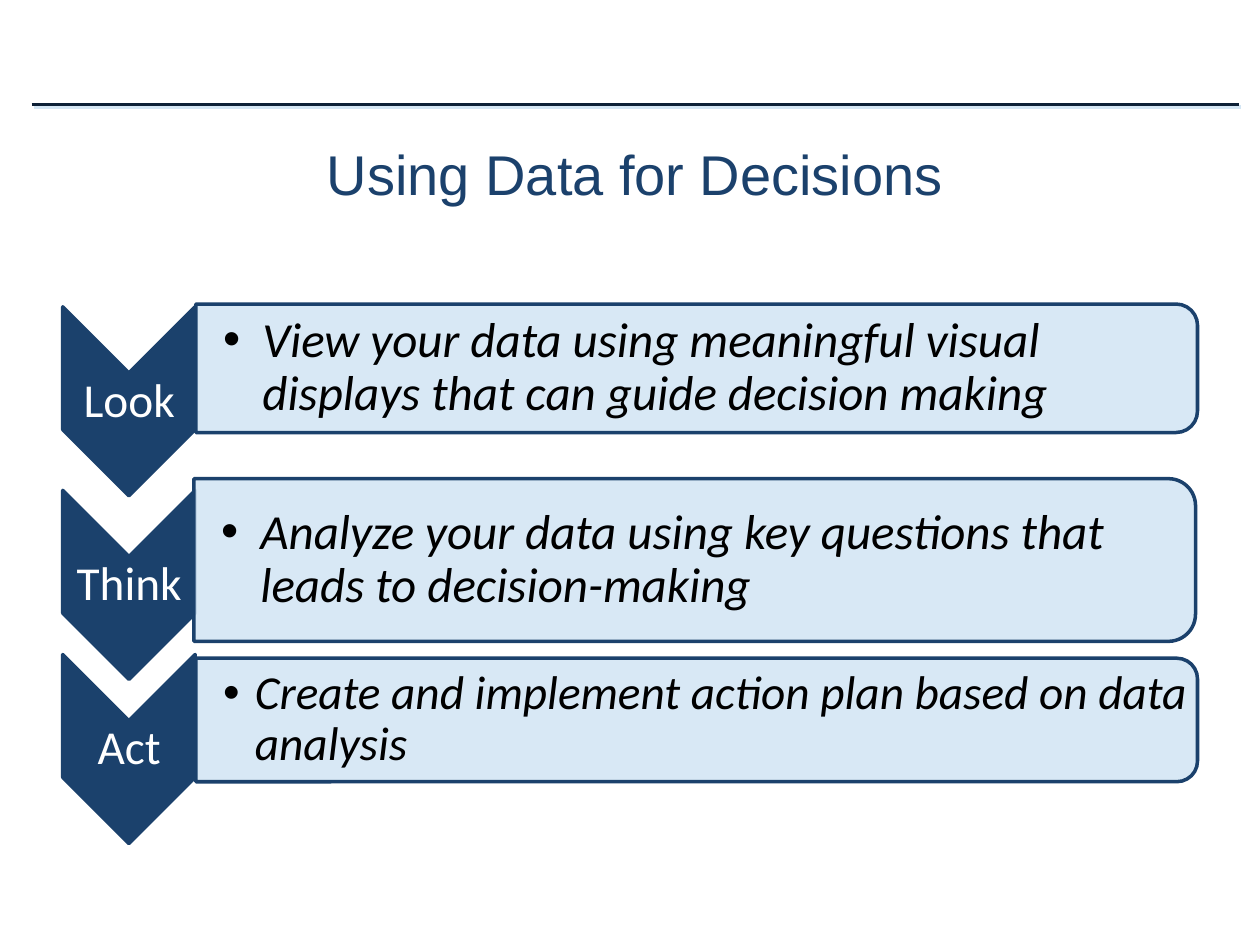
from lxml import etree
from pptx import Presentation
from pptx import util as u
from pptx.dml import color
from pptx.enum import shapes, text
from pptx.oxml import ns

COLORS = {"navy": "1B416C", "rule": "0D2036", "pale": "D4E6F4", "white": "FFFFFF", "black": "000000"}
STEPS = [
    {"label": "Look", "chevron_top": 6.76, "card": (3.95, 6.13, 2.59), "size": 28, "indent": 0.79,
     "detail": "View your data using meaningful visual displays that can guide decision making"},
    {"label": "Think", "chevron_top": 10.46, "card": (3.91, 9.65, 3.28), "size": 28, "indent": 0.79,
     "detail": "Analyze your data using key questions that leads to decision-making"},
    {"label": "Act", "chevron_top": 13.77, "card": (3.95, 13.27, 2.49), "size": 27, "indent": 0.64,
     "detail": "Create and implement action plan based on data analysis"},
]
CARD_WIDTH = 20.19


def rgb(name):
    return color.RGBColor.from_string(COLORS[name])


def child(parent, tag, **attributes):
    return etree.SubElement(parent, ns.qn(tag), {key: str(value) for key, value in attributes.items()})


class SlideBuilder:
    def __init__(self, slide, font="Calibri"):
        self.slide = slide
        self.font = font

    def set_font(self, paragraph, size, color_name, italic=False, name=None):
        paragraph.font.name = name or self.font
        paragraph.font.size = u.Pt(size)
        paragraph.font.italic = italic
        paragraph.font.color.rgb = rgb(color_name)

    def title(self, words, left, top, width, height):
        shape = self.slide.shapes.title
        shape.left, shape.top, shape.width, shape.height = map(u.Cm, (left, top, width, height))
        shape.text_frame.text = words
        shape.text_frame.vertical_anchor = text.MSO_ANCHOR.MIDDLE
        paragraph = shape.text_frame.paragraphs[0]
        paragraph.alignment = text.PP_ALIGN.CENTER
        self.set_font(paragraph, 32, "navy", name="Arial")

    def rule(self, left, right, y):
        line = self.slide.shapes.add_connector(
            shapes.MSO_CONNECTOR.STRAIGHT, u.Cm(left), u.Cm(y), u.Cm(right), u.Cm(y))
        line.line.color.rgb = rgb("rule")
        line.line.width = u.Pt(2)
        effects = child(line._element.spPr, "a:effectLst")
        shadow = child(effects, "a:outerShdw", dist=u.Pt(2), dir=40 * 60000)
        child(shadow, "a:srgbClr", val=COLORS["pale"])

    def turned_shape(self, kind, center_x, center_y, width, height, fill, opacity=100):
        shape = self.slide.shapes.add_shape(
            kind, u.Cm(center_x - width / 2), u.Cm(center_y - height / 2), u.Cm(width), u.Cm(height))
        shape.rotation = 90
        shape.shadow.inherit = False
        shape.fill.solid()
        shape.fill.fore_color.rgb = rgb(fill)
        if opacity < 100:
            fill_color = shape._element.spPr.find(".//" + ns.qn("a:srgbClr"))
            child(fill_color, "a:alpha", val=opacity * 1000)
        shape.line.color.rgb = rgb("navy")
        shape.line.width = u.Pt(2)

    def text_box(self, words, left, top, width, height, inset=0.05):
        frame = self.slide.shapes.add_textbox(*map(u.Cm, (left, top, width, height))).text_frame
        frame.word_wrap = True
        frame.vertical_anchor = text.MSO_ANCHOR.MIDDLE
        frame.margin_left = u.Cm(inset)
        frame.margin_top = frame.margin_right = frame.margin_bottom = u.Cm(0.05)
        frame.text = words
        paragraph = frame.paragraphs[0]
        paragraph.line_spacing = 0.9
        return paragraph

    def chevron(self, label, top):
        self.turned_shape(shapes.MSO_SHAPE.CHEVRON, 2.6, top + 1.33, 3.81, 2.67, "navy")
        paragraph = self.text_box(label, 1.27, top + 0.77, 2.67, 1.14)
        paragraph.alignment = text.PP_ALIGN.CENTER
        self.set_font(paragraph, 27, "white")

    def card(self, detail, left, top, height, size, indent):
        self.turned_shape(shapes.MSO_SHAPE.ROUND_2_SAME_RECTANGLE, left + CARD_WIDTH / 2,
                          top + height / 2, height, CARD_WIDTH, "pale", opacity=90)
        paragraph = self.text_box(detail, left, top + 0.13, CARD_WIDTH - 0.13, height - 0.26, 0.55)
        properties = paragraph._p.get_or_add_pPr()
        properties.set("marL", str(u.Cm(indent)))
        properties.set("indent", str(-u.Cm(indent)))
        child(properties, "a:buFont", typeface="Arial")
        child(properties, "a:buChar", char="•")
        self.set_font(paragraph, size, "black", italic=True)


def main():
    presentation = Presentation()
    presentation.slide_width, presentation.slide_height = u.Cm(25.4), u.Cm(19.05)
    builder = SlideBuilder(presentation.slides.add_slide(presentation.slide_layouts[5]))
    builder.rule(0.64, 24.97, 2.11)
    builder.title("Using Data for Decisions", 0.64, 2.54, 24.33, 1.9)
    for step in STEPS:
        builder.chevron(step["label"], step["chevron_top"])
        builder.card(step["detail"], *step["card"], step["size"], step["indent"])
    presentation.save("out.pptx")


if __name__ == "__main__":
    main()
